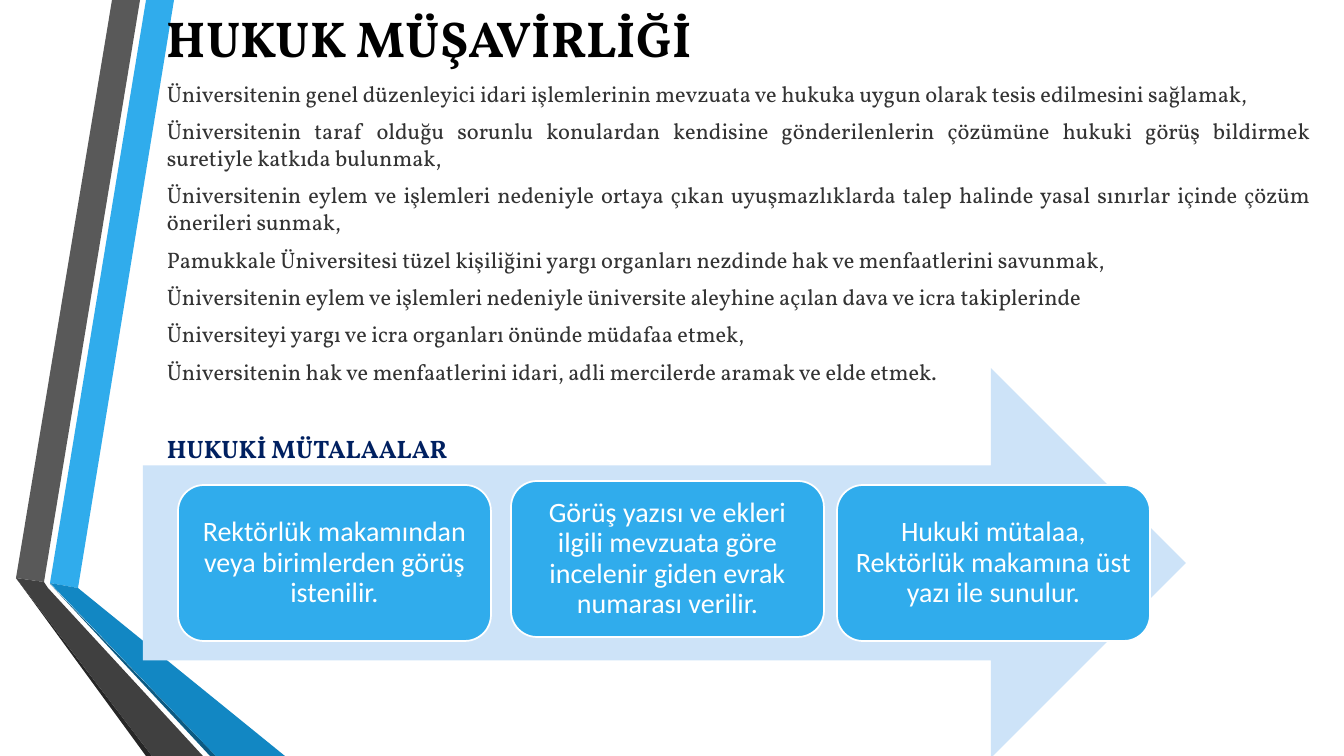
from dataclasses import dataclass

from pptx import Presentation
from pptx.dml.color import RGBColor
from pptx.enum.shapes import MSO_SHAPE
from pptx.enum.text import MSO_ANCHOR, PP_ALIGN
from pptx.util import Pt

TOP, MIDDLE = MSO_ANCHOR.TOP, MSO_ANCHOR.MIDDLE
LEFT, CENTER, JUSTIFY = PP_ALIGN.LEFT, PP_ALIGN.CENTER, PP_ALIGN.JUSTIFY
RIGHT_ARROW, ROUNDED = MSO_SHAPE.RIGHT_ARROW, MSO_SHAPE.ROUNDED_RECTANGLE


@dataclass(frozen=True)
class Theme:
    heading_font: str = "Vollkorn"
    step_font: str = "Calibri"
    title_size: int = 36
    body_size: int = 16
    subtitle_size: int = 18
    step_size: int = 20
    black: str = "000000"
    body: str = "333333"
    navy: str = "002060"
    white: str = "FFFFFF"
    blue: str = "30ACEC"
    deep_blue: str = "1287C3"
    dark_blue: str = "0C5A82"
    pale_blue: str = "CDE3F8"
    gray: str = "595959"
    dark_gray: str = "404040"
    charcoal: str = "262626"


THEME = Theme()
EMU_PER_PX = 914400 / 100.8
SLIDE_SIZE = (1344, 756)

TITLE = "HUKUK MÜŞAVİRLİĞİ"
DUTIES = [
    "Üniversitenin genel düzenleyici idari işlemlerinin mevzuata ve hukuka uygun olarak tesis edilmesini sağlamak,",
    "Üniversitenin taraf olduğu sorunlu konulardan kendisine gönderilenlerin çözümüne hukuki görüş bildirmek "
    "suretiyle katkıda bulunmak,",
    "Üniversitenin eylem ve işlemleri nedeniyle ortaya çıkan uyuşmazlıklarda talep halinde yasal sınırlar içinde "
    "çözüm önerileri sunmak,",
    "Pamukkale Üniversitesi tüzel kişiliğini yargı organları nezdinde hak ve menfaatlerini savunmak,",
    "Üniversitenin eylem ve işlemleri nedeniyle üniversite aleyhine açılan dava ve icra takiplerinde",
    "Üniversiteyi yargı ve icra organları önünde müdafaa etmek,",
    "Üniversitenin hak ve menfaatlerini idari, adli mercilerde aramak ve elde etmek.",
]
SUBTITLE = "HUKUKİ MÜTALAALAR"
# Left, top and text of each step
STEPS = [
    (178, 485, "Rektörlük makamından veya birimlerden görüş istenilir."),
    (511, 481, "Görüş yazısı ve ekleri ilgili mevzuata göre incelenir giden evrak numarası verilir."),
    (837, 485, "Hukuki mütalaa, Rektörlük makamına üst yazı ile sunulur."),
]
STEP_SIZE = (313, 156)
STEP_INSET = 8
ARROW_BOX = (143, 368, 1043, 390)
TEXT_LEFT = 157

RIBBONS = [
    (THEME.blue, [(50, 583), (78, 588), (174, 0), (146, 0)]),
    (THEME.gray, [(140, 0), (112, 0), (16, 578), (44, 582)]),
    (THEME.charcoal, [(16, 578), (146, 756), (152, 756)]),
    (THEME.dark_blue, [(50, 584), (210, 756), (216, 756)]),
    (THEME.deep_blue, [(50, 583), (216, 756), (285, 756), (78, 588)]),
    (THEME.dark_gray, [(203, 756), (48, 588), (44, 582), (16, 578), (152, 756)]),
]


def px(length):
    return round(length * EMU_PER_PX)


def paint(shape, fill, line=None):
    shape.shadow.inherit = False
    shape.fill.solid()
    shape.fill.fore_color.rgb = RGBColor.from_string(fill)
    if line:
        shape.line.color.rgb = RGBColor.from_string(line)
        shape.line.width = Pt(1.25)
    else:
        shape.line.fill.background()


def add_ribbon(slide, color, points):
    builder = slide.shapes.build_freeform(*points[0], scale=EMU_PER_PX)
    builder.add_line_segments(points[1:], close=True)
    paint(builder.convert_to_shape(), color)


def write(shape, texts, *, font, size, color, bold=False, align=LEFT,
          anchor=TOP, after=0, spacing=None, inset=None):
    frame = shape.text_frame
    frame.word_wrap = True
    frame.vertical_anchor = anchor
    if inset is not None:
        frame.margin_left = frame.margin_right = px(inset)
        frame.margin_top = frame.margin_bottom = px(inset)
    for index, text in enumerate(texts):
        paragraph = frame.add_paragraph() if index else frame.paragraphs[0]
        paragraph.alignment = align
        paragraph.space_after = Pt(after)
        if spacing:
            paragraph.line_spacing = spacing
        run = paragraph.add_run()
        run.text = text
        run.font.name = font
        run.font.size = Pt(size)
        run.font.bold = bold
        run.font.color.rgb = RGBColor.from_string(color)


def add_text(slide, box, texts, **text_format):
    write(slide.shapes.add_textbox(*map(px, box)), texts, **text_format)


def add_process(slide):
    arrow = slide.shapes.add_shape(RIGHT_ARROW, *map(px, ARROW_BOX))
    paint(arrow, THEME.pale_blue)
    for left, top, text in STEPS:
        step = slide.shapes.add_shape(ROUNDED, *map(px, (left, top, *STEP_SIZE)))
        paint(step, THEME.blue, THEME.white)
        write(step, [text], font=THEME.step_font, size=THEME.step_size, color=THEME.white,
              align=CENTER, anchor=MIDDLE, spacing=0.9, inset=STEP_INSET)


def main():
    presentation = Presentation()
    presentation.slide_width, presentation.slide_height = map(px, SLIDE_SIZE)
    slide = presentation.slides.add_slide(presentation.slide_layouts[6])

    for color, points in RIBBONS:
        add_ribbon(slide, color, points)
    add_text(slide, (TEXT_LEFT, 0, 1105, 75), [TITLE], font=THEME.heading_font,
             size=THEME.title_size, color=THEME.black, bold=True, anchor=MIDDLE)
    add_text(slide, (TEXT_LEFT, 75, 1164, 323), DUTIES, font=THEME.heading_font,
             size=THEME.body_size, color=THEME.body, align=JUSTIFY, after=7.5)
    add_process(slide)
    add_text(slide, (TEXT_LEFT, 428, 658, 72), [SUBTITLE], font=THEME.heading_font,
             size=THEME.subtitle_size, color=THEME.navy, bold=True)

    presentation.save("out.pptx")


if __name__ == "__main__":
    main()
